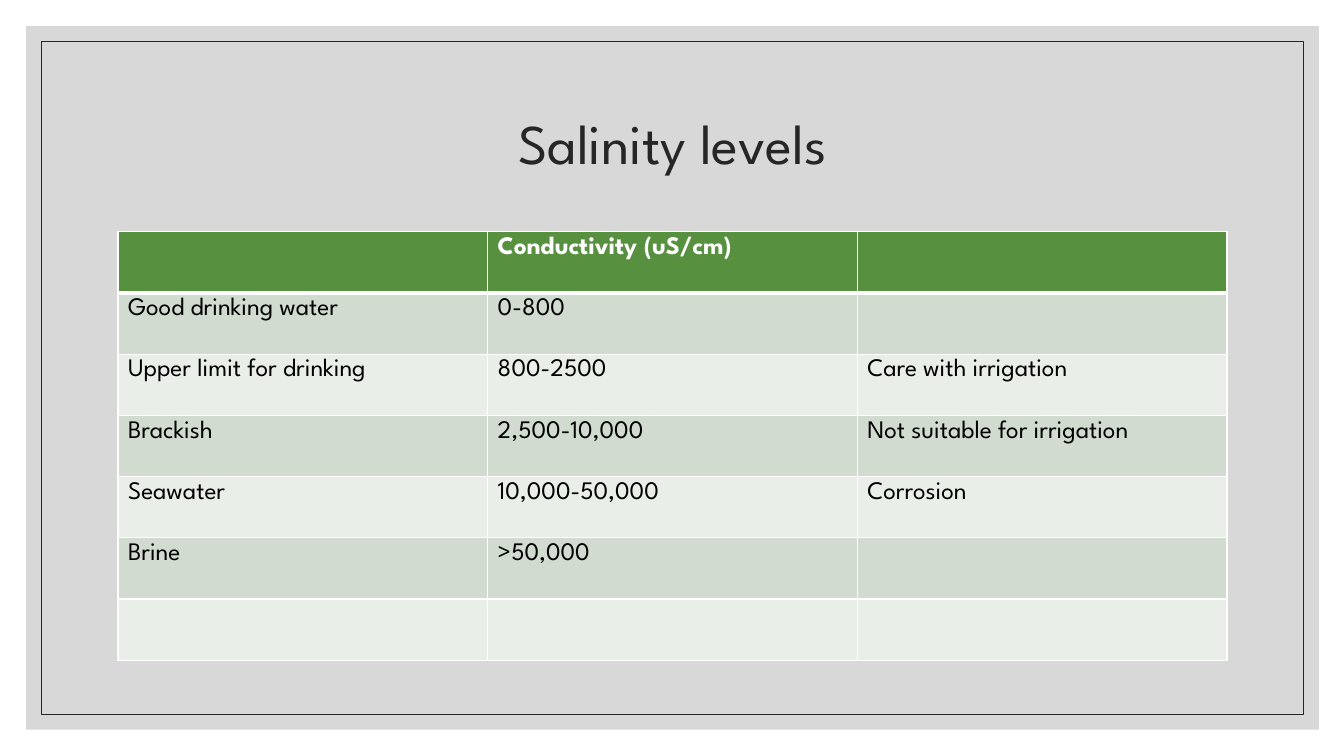
import dataclasses

import lxml.etree
import pptx
import pptx.dml.color
import pptx.enum.shapes
import pptx.enum.text
import pptx.oxml.ns
import pptx.util
from pptx.util import Inches


@dataclasses.dataclass(frozen=True)
class Theme:
    font: str = "League Spartan"
    title_size: int = 40
    table_size: int = 18
    panel: str = "BFBFBF"
    dark: str = "262626"
    header: str = "57903F"
    bands: tuple = ("EAEEE8", "D1DBCF")
    white: str = "FFFFFF"
    black: str = "000000"


theme = Theme()


def style_font(font, size, color, bold=False):
    font.name = theme.font
    font.size = pptx.util.Pt(size)
    font.bold = bold
    font.color.rgb = pptx.dml.color.RGBColor.from_string(color)


def add_xml(parent, tag, index=None, **attributes):
    child = lxml.etree.Element(pptx.oxml.ns.qn(tag), attributes)
    parent.insert(len(parent) if index is None else index, child)
    return child


deck = pptx.Presentation()
deck.slide_width = Inches(13.33)
deck.slide_height = Inches(7.5)
page = deck.slides.add_slide(deck.slide_layouts[5])
title = page.shapes.title

# Translucent panel and thin frame, both behind the title
panel, frame = [
    page.shapes.add_shape(
        pptx.enum.shapes.MSO_SHAPE.RECTANGLE,
        Inches(margin), Inches(margin), Inches(width), Inches(height))
    for margin, width, height in ((0.26, 12.82, 6.98), (0.41, 12.52, 6.68))
]
for box in (panel, frame):
    box.shadow.inherit = False
    title.element.addprevious(box.element)
panel.fill.solid()
panel.fill.fore_color.rgb = pptx.dml.color.RGBColor.from_string(theme.panel)
panel_color = panel.element.spPr.find(".//" + pptx.oxml.ns.qn("a:srgbClr"))
add_xml(panel_color, "a:alpha", val="60000")
panel.line.fill.background()
frame.fill.background()
frame.line.color.rgb = pptx.dml.color.RGBColor.from_string(theme.dark)
frame.line.width = pptx.util.Pt(0.5)

# Title
title.left, title.top = Inches(1.17), Inches(0.7)
title.width, title.height = Inches(11), Inches(1.5)
title.text_frame.text = "Salinity levels"
title.text_frame.vertical_anchor = pptx.enum.text.MSO_ANCHOR.MIDDLE
para = title.text_frame.paragraphs[0]
para.alignment = pptx.enum.text.PP_ALIGN.CENTER
para.line_spacing = 0.9
style_font(para.font, theme.title_size, theme.dark)

# Salinity table
levels = [
    ("", "Conductivity (uS/cm)", ""),
    ("Good drinking water", "0-800", ""),
    ("Upper limit for drinking", "800-2500", "Care with irrigation"),
    ("Brackish", "2,500-10,000", "Not suitable for irrigation"),
    ("Seawater", "10,000-50,000", "Corrosion"),
    ("Brine", ">50,000", ""),
    ("", "", ""),
]
table = page.shapes.add_table(
    len(levels), 3, Inches(1.17), Inches(2.3), Inches(11), Inches(4.25)).table

for row, texts in enumerate(levels):
    is_header = row == 0
    fill = theme.header if is_header else theme.bands[row % 2]
    for column, text in enumerate(texts):
        cell = table.cell(row, column)
        cell.text = text
        style_font(cell.text_frame.paragraphs[0].font, theme.table_size,
                   theme.white if is_header else theme.black, is_header)
        cell.fill.solid()
        cell.fill.fore_color.rgb = pptx.dml.color.RGBColor.from_string(fill)

        # White borders, thicker between header and body
        widths = {"L": 1, "R": 1, "T": 3 if row == 1 else 1, "B": 3 if is_header else 1}
        properties = cell._tc.get_or_add_tcPr()
        for index, (side, points) in enumerate(widths.items()):
            border = add_xml(properties, f"a:ln{side}", index,
                             w=str(pptx.util.Pt(points)))
            add_xml(add_xml(border, "a:solidFill"), "a:srgbClr", val=theme.white)

deck.save("out.pptx")
